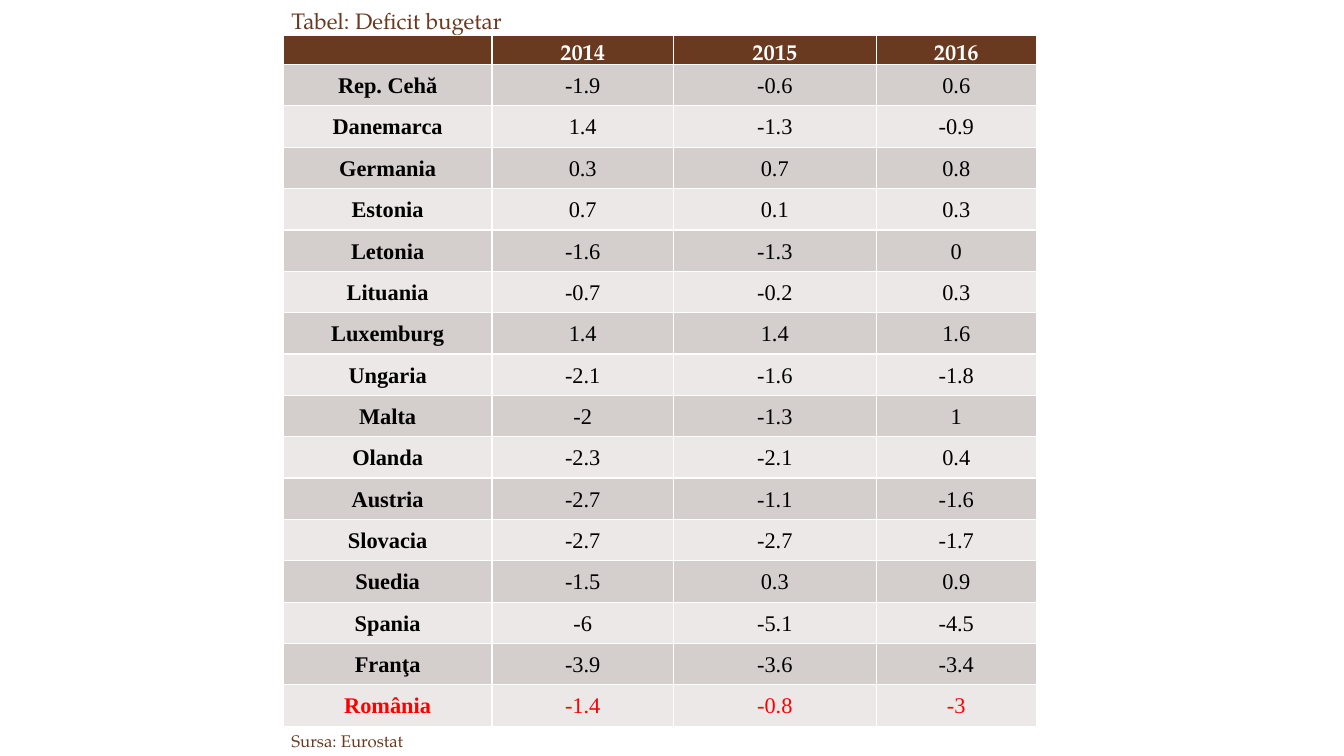
from lxml.etree import SubElement
from pptx import Presentation
from pptx.dml.color import RGBColor
from pptx.enum.text import MSO_ANCHOR as Anchor, MSO_AUTO_SIZE as AutoSize, PP_ALIGN as Align
from pptx.oxml.ns import qn
from pptx.util import Inches, Pt

SERIF, TIMES = "TeX Gyre Pagella", "Times New Roman"
BROWN, WHITE, BLACK, RED = "6A3A20", "FFFFFF", "000000", "FF0000"
BANDS = ("D4CECC", "EBE8E7")
TABLE_LEFT, TABLE_WIDTH = 2.81, 7.48
COLUMN_WIDTHS = (2.07, 1.8, 2.01, 1.59)
CAPTION_LEFT, CAPTION_WIDTH, CAPTION_HEIGHT = 2.57, 6.46, 0.37

YEARS = ("", "2014", "2015", "2016")
DEFICITS = (
    ("Rep. Cehă", "-1.9", "-0.6", "0.6"),
    ("Danemarca", "1.4", "-1.3", "-0.9"),
    ("Germania", "0.3", "0.7", "0.8"),
    ("Estonia", "0.7", "0.1", "0.3"),
    ("Letonia", "-1.6", "-1.3", "0"),
    ("Lituania", "-0.7", "-0.2", "0.3"),
    ("Luxemburg", "1.4", "1.4", "1.6"),
    ("Ungaria", "-2.1", "-1.6", "-1.8"),
    ("Malta", "-2", "-1.3", "1"),
    ("Olanda", "-2.3", "-2.1", "0.4"),
    ("Austria", "-2.7", "-1.1", "-1.6"),
    ("Slovacia", "-2.7", "-2.7", "-1.7"),
    ("Suedia", "-1.5", "0.3", "0.9"),
    ("Spania", "-6", "-5.1", "-4.5"),
    ("Franţa", "-3.9", "-3.6", "-3.4"),
    ("România", "-1.4", "-0.8", "-3"),
)


def color(value):
    return RGBColor.from_string(value)


def write(frame, text, font=SERIF, size=16, ink=BROWN, bold=False, align=Align.LEFT, spacing=1.0):
    para = frame.paragraphs[0]
    para.alignment = align
    para.line_spacing = spacing
    if text:
        span = para.add_run()
        span.text = text
        span.font.name, span.font.size, span.font.bold = font, Pt(size), bold
        span.font.color.rgb = color(ink)


def add_borders(cell, bottom):
    """Draw white cell edges, one point wide except for the bottom one."""
    properties = cell._tc.get_or_add_tcPr()
    for position, side in enumerate(("lnL", "lnR", "lnT", "lnB")):
        width = bottom if side == "lnB" else 1
        line = SubElement(properties, qn(f"a:{side}"), w=str(Pt(width)))
        fill = SubElement(line, qn("a:solidFill"))
        SubElement(fill, qn("a:srgbClr"), val=WHITE)
        properties.insert(position, line)


def add_caption(box, top, text, size, anchor):
    box.left, box.top = Inches(CAPTION_LEFT), Inches(top)
    box.width, box.height = Inches(CAPTION_WIDTH), Inches(CAPTION_HEIGHT)
    frame = box.text_frame
    frame.word_wrap = True
    frame.auto_size = AutoSize.NONE
    frame.vertical_anchor = anchor
    frame.margin_left = Inches(0.32)
    frame.margin_top = frame.margin_bottom = Inches(0.05)
    write(frame, text, size=size)


def add_grid(page, top, height, rows, row_format, bottom=1):
    """Fill a table; row_format(index, column) gives the fill and the text format."""
    table = page.shapes.add_table(len(rows), len(COLUMN_WIDTHS), Inches(TABLE_LEFT),
                                  Inches(top), Inches(TABLE_WIDTH), Inches(height)).table
    table.first_row = table.horz_banding = False
    for column, width in zip(table.columns, COLUMN_WIDTHS):
        column.width = Inches(width)
    for index, values in enumerate(rows):
        table.rows[index].height = Inches(height / len(rows))
        for column, value in enumerate(values):
            cell = table.cell(index, column)
            fill, text_format = row_format(index, column)
            cell.fill.solid()
            cell.fill.fore_color.rgb = color(fill)
            cell.vertical_anchor = Anchor.MIDDLE
            cell.margin_top = cell.margin_bottom = 0
            add_borders(cell, bottom)
            write(cell.text_frame, value, align=Align.CENTER, spacing=1.07, **text_format)


def header_format(index, column):
    return BROWN, {"ink": WHITE, "bold": True}


def country_format(index, column):
    ink = RED if DEFICITS[index][0] == "România" else BLACK
    return BANDS[index % 2], {"font": TIMES, "ink": ink, "bold": column == 0}


def main():
    deck = Presentation()
    deck.slide_width, deck.slide_height = Inches(13.33), Inches(7.5)
    page = deck.slides.add_slide(deck.slide_layouts[5])
    add_caption(page.shapes.title, 0.02, "Tabel: Deficit bugetar", 16, Anchor.MIDDLE)
    source = page.shapes.add_textbox(0, 0, 0, 0)
    add_caption(source, 7.13, "Sursa: Eurostat", 12, Anchor.BOTTOM)
    add_grid(page, 0.35, 0.39, (YEARS,), header_format, bottom=3)
    add_grid(page, 0.64, 6.57, DEFICITS, country_format)
    deck.save("out.pptx")


if __name__ == "__main__":
    main()
